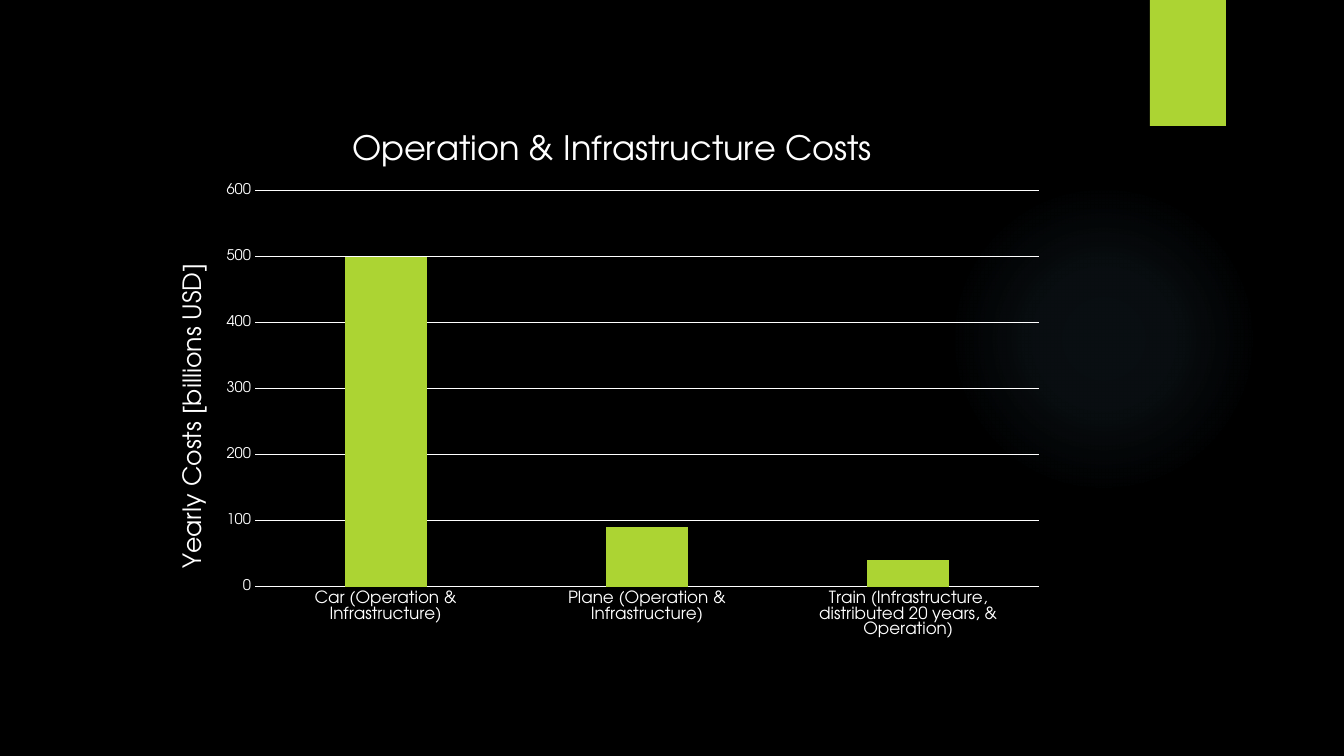
"""Build a dark slide with a column chart of operation and infrastructure costs."""
import lxml.etree
import pptx
import pptx.chart.data
import pptx.dml.color
import pptx.enum.chart
import pptx.enum.shapes
import pptx.oxml
import pptx.oxml.ns
import pptx.util

TITLE = "Operation & Infrastructure Costs"
AXIS_TITLE = "Yearly Costs [billions USD]"
SERIES_NAME = "Series 1"
COSTS = {
    "Car (Operation & Infrastructure)": 500,
    "Plane (Operation & Infrastructure)": 90,
    "Train (Infrastructure, distributed 20 years, & Operation)": 40,
}

SLIDE_SIZE = (1344, 756)
GLOW_BOX = (949, 184, 310, 310)
TAB_BOX = (1150, 0, 76, 126)
CHART_BOX = (156, 106, 900, 543)
PLOT_BOX = (255, 191, 784, 396)
TITLE_CORNER = (346, 125)
AXIS_TITLE_CORNER = (175, 259)
GLOW_STOPS = [(0, 7), (36, 6), (69, 0)]

THEME = {
    "font": "TeX Gyre Adventor",
    "background": "000000",
    "text": "FFFFFF",
    "accent": "ACD433",
    "glow": "7AC4F0",
    "title_size": 24,
    "axis_title_size": 18,
    "category_size": 12,
    "value_size": 10.5,
    "base_size": 10,
    "line_width": 0.75,
}
EMU_PER_PX = 914400 / 100.8


def px(length):
    return pptx.util.Emu(round(length * EMU_PER_PX))


def color(name):
    return pptx.dml.color.RGBColor.from_string(THEME[name])


def style_font(font, size):
    font.name = THEME["font"]
    font.size = pptx.util.Pt(size)
    font.bold = False
    font.color.rgb = color("text")


def write_text(frame, text, *, size):
    paragraph = frame.paragraphs[0]
    run = paragraph.add_run()
    run.text = text
    style_font(run.font, size)


def style_line(line):
    line.color.rgb = color("text")
    line.width = pptx.util.Pt(THEME["line_width"])


def add_plain_shape(slide, kind, box):
    shape = slide.shapes.add_shape(kind, *map(px, box))
    shape.shadow.inherit = False
    shape.line.fill.background()
    return shape


def fill_with_glow(shape):
    shape.fill.background()
    stops = "".join(
        f'<a:gs pos="{position * 1000}"><a:srgbClr val="{THEME["glow"]}">'
        f'<a:alpha val="{opacity * 1000}"/></a:srgbClr></a:gs>'
        for position, opacity in GLOW_STOPS
    )
    gradient = pptx.oxml.parse_xml(
        f'<a:gradFill {pptx.oxml.ns.nsdecls("a")}><a:gsLst>{stops}</a:gsLst>'
        '<a:path path="circle"><a:fillToRect l="50000" t="50000" r="50000" b="50000"/>'
        "</a:path></a:gradFill>"
    )
    properties = shape.element.spPr
    properties.replace(properties.find(pptx.oxml.ns.qn("a:noFill")), gradient)


def place_in_chart(element, index, box, inner=False):
    left, top, width, height = CHART_BOX
    shares = {"x": (box[0] - left) / width, "y": (box[1] - top) / height}
    if len(box) == 4:
        shares.update(w=box[2] / width, h=box[3] / height)
    qn = pptx.oxml.ns.qn
    for old_layout in element.findall(qn("c:layout")):
        element.remove(old_layout)
    layout = pptx.oxml.parse_xml(f'<c:layout {pptx.oxml.ns.nsdecls("c")}/>')
    manual = lxml.etree.SubElement(layout, qn("c:manualLayout"))
    settings = [("layoutTarget", "inner")] if inner else []
    settings += [("xMode", "edge"), ("yMode", "edge")]
    settings += [(name, f"{share:.4f}") for name, share in shares.items()]
    for name, value in settings:
        lxml.etree.SubElement(manual, qn(f"c:{name}")).set("val", value)
    element.insert(index, layout)


def add_cost_chart(slide):
    data = pptx.chart.data.CategoryChartData()
    data.categories = list(COSTS)
    data.add_series(SERIES_NAME, list(COSTS.values()))
    chart = slide.shapes.add_chart(
        pptx.enum.chart.XL_CHART_TYPE.COLUMN_CLUSTERED, *map(px, CHART_BOX), data
    ).chart
    style_font(chart.font, THEME["base_size"])
    chart.has_legend = False

    plot = chart.plots[0]
    plot.gap_width = 219
    plot.overlap = -27
    plot.vary_by_categories = False
    fill = plot.series[0].format.fill
    fill.solid()
    fill.fore_color.rgb = color("accent")

    categories, values = chart.category_axis, chart.value_axis
    for axis, size in ((categories, "category_size"), (values, "value_size")):
        axis.major_tick_mark = pptx.enum.chart.XL_TICK_MARK.NONE
        axis.minor_tick_mark = pptx.enum.chart.XL_TICK_MARK.NONE
        style_font(axis.tick_labels.font, THEME[size])
    style_line(categories.format.line)
    values.format.line.fill.background()
    values.minimum_scale, values.maximum_scale, values.major_unit = 0, 600, 100
    values.has_major_gridlines = True
    style_line(values.major_gridlines.format.line)

    write_text(chart.chart_title.text_frame, TITLE, size=THEME["title_size"])
    place_in_chart(chart.chart_title._element, 1, TITLE_CORNER)
    axis_frame = values.axis_title.text_frame
    write_text(axis_frame, AXIS_TITLE, size=THEME["axis_title_size"])
    body = axis_frame._txBody.find(pptx.oxml.ns.qn("a:bodyPr"))
    body.set("rot", "-5400000")
    body.set("vert", "horz")
    place_in_chart(values.axis_title._element, 1, AXIS_TITLE_CORNER)
    plot_area = chart._chartSpace.xpath("c:chart/c:plotArea")[0]
    place_in_chart(plot_area, 0, PLOT_BOX, inner=True)


def main():
    presentation = pptx.Presentation()
    presentation.slide_width, presentation.slide_height = map(px, SLIDE_SIZE)
    slide = presentation.slides.add_slide(presentation.slide_layouts[6])
    background = slide.background.fill
    background.solid()
    background.fore_color.rgb = color("background")

    shapes = pptx.enum.shapes.MSO_SHAPE
    fill_with_glow(add_plain_shape(slide, shapes.OVAL, GLOW_BOX))
    tab = add_plain_shape(slide, shapes.RECTANGLE, TAB_BOX)
    tab.fill.solid()
    tab.fill.fore_color.rgb = color("accent")
    add_cost_chart(slide)
    presentation.save("out.pptx")


if __name__ == "__main__":
    main()
